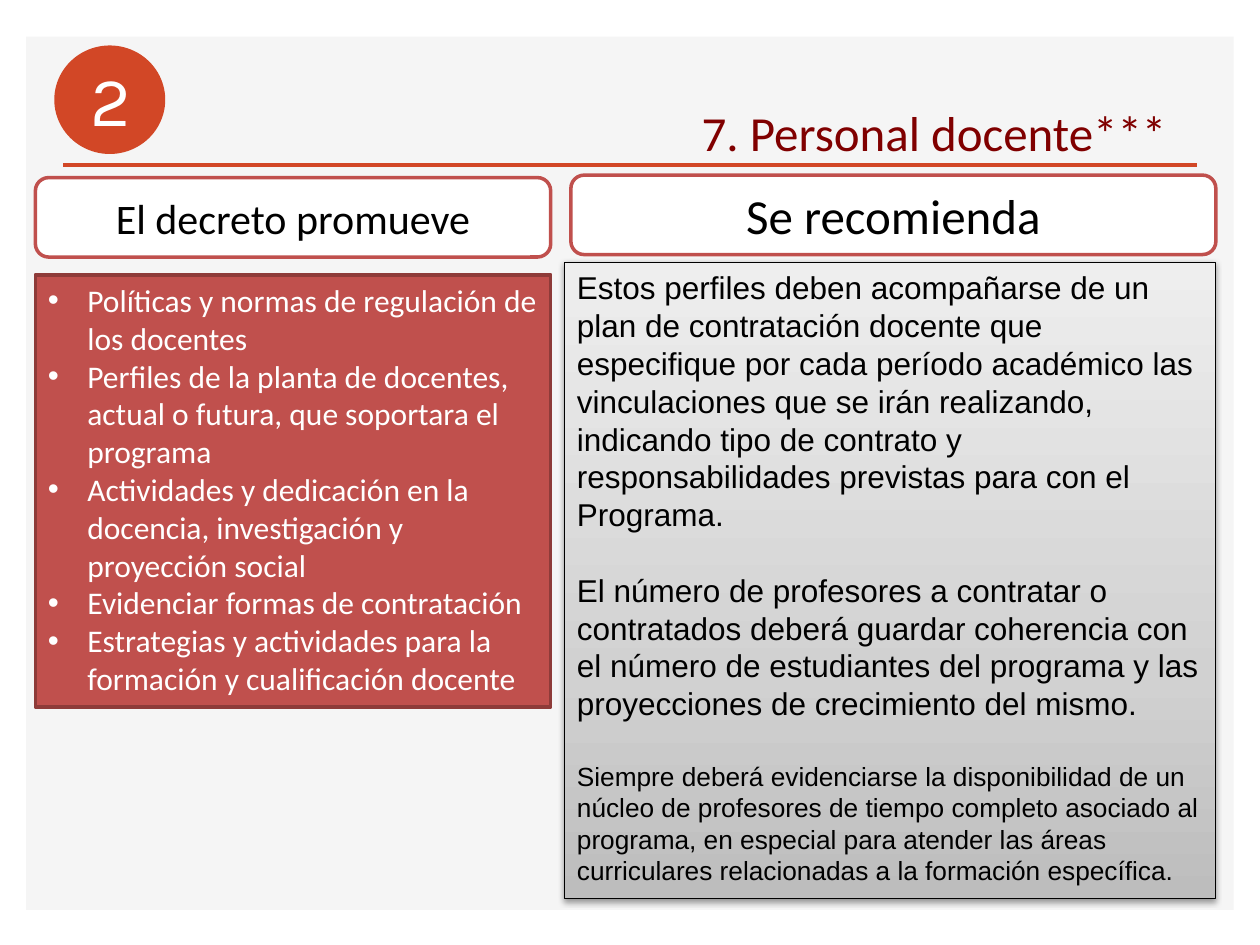
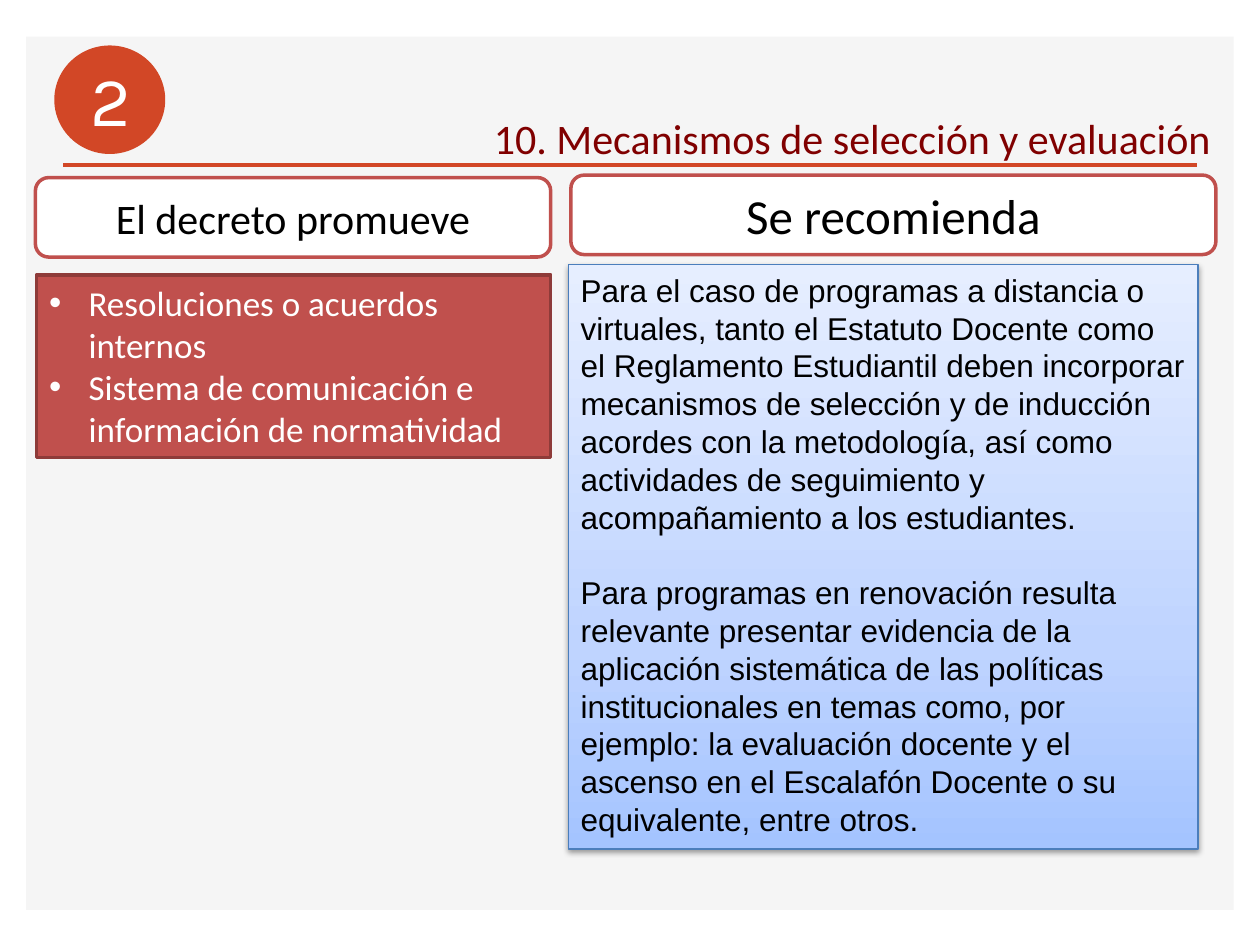
"""Build two slides that set decree requirements beside recommendations."""
from copy import deepcopy

from lxml import etree
from pptx import Presentation
from pptx.dml.color import RGBColor
from pptx.enum.shapes import MSO_CONNECTOR, MSO_SHAPE
from pptx.enum.text import MSO_ANCHOR, MSO_AUTO_SIZE, PP_ALIGN
from pptx.oxml.ns import qn
from pptx.util import Pt

RECTANGLE, ROUNDED, OVAL = MSO_SHAPE.RECTANGLE, MSO_SHAPE.ROUNDED_RECTANGLE, MSO_SHAPE.OVAL
STRAIGHT = MSO_CONNECTOR.STRAIGHT
TOP, MIDDLE = MSO_ANCHOR.TOP, MSO_ANCHOR.MIDDLE
LEFT, CENTER = PP_ALIGN.LEFT, PP_ALIGN.CENTER
NO_AUTOFIT = MSO_AUTO_SIZE.NONE

color = RGBColor.from_string
ORANGE, RED, DARK_RED, MAROON = "D24726", "C0504D", "8E3B39", "800000"
WHITE, BLACK, PALE_GRAY = "FFFFFF", "000000", "F5F5F5"
LINE_FACTOR = 1.2
BULLET_INDENT = Pt(22.5)

HEADERS = [
    ("El decreto promueve", 24, (20.2, 101.5, 294.5, 45.4)),
    ("Se recomienda", 28, (326.2, 100.1, 368.6, 45.4)),
]

PAGES = [
    {
        "title": ("7. Personal docente***", 28, (393.8, 54.7, 283, 41)),
        "list_place": (20.2, 157, 294.5, 247),
        "list_size": 18,
        "list": [
            "Políticas y normas de regulación de los docentes",
            "Perfiles de la planta de docentes, actual o futura, que soportara el programa",
            "Actividades y dedicación en la docencia, investigación y proyección social",
            "Evidenciar formas de contratación",
            "Estrategias y actividades para la formación y cualificación docente",
        ],
        "panel_place": (322.6, 149.8, 372.2, 363.6),
        "panel_line": BLACK,
        "gradient": ["BDBDBD", "D1D1D1", "EEEEEE"],
        "panel_sizes": [18, 18, 15],
        "panel": [
            "Estos perfiles deben acompañarse de un plan de contratación docente que "
            "especifique por cada período académico las vinculaciones que se irán "
            "realizando, indicando tipo de contrato y responsabilidades previstas "
            "para con el Programa.",
            "El número de profesores a contratar o contratados deberá guardar "
            "coherencia con el número de estudiantes del programa y las "
            "proyecciones de crecimiento del mismo.",
            "Siempre deberá evidenciarse la disponibilidad de un núcleo de profesores "
            "de tiempo completo asociado al programa, en especial para atender las "
            "áreas curriculares relacionadas a la formación específica.",
        ],
    },
    {
        "title": ("10. Mecanismos de selección y evaluación", 24, (275, 60.5, 428, 36)),
        "list_place": (20.9, 157, 293.8, 104.4),
        "list_size": 20,
        "list": [
            "Resoluciones o acuerdos internos",
            "Sistema de comunicación e información de normatividad",
        ],
        "panel_place": (324.7, 151.2, 360, 334),
        "panel_line": "4B7EBC",
        "gradient": ["A4C4FF", "BFD4FF", "E6EEFF"],
        "panel_sizes": [18, 18],
        "panel": [
            "Para el caso de programas a distancia o virtuales, tanto el Estatuto "
            "Docente como el Reglamento Estudiantil deben incorporar mecanismos de "
            "selección y de inducción acordes con la metodología, así como "
            "actividades de seguimiento y acompañamiento a los estudiantes.",
            "Para programas en renovación resulta relevante presentar evidencia de la "
            "aplicación sistemática de las políticas institucionales en temas como, "
            "por ejemplo: la evaluación docente y el ascenso en el Escalafón Docente "
            "o su equivalente, entre otros.",
        ],
    },
]


def paint(shape, place, fill, line=None, line_width=2):
    """Place a shape and set its fill and outline."""
    shape.left, shape.top, shape.width, shape.height = map(Pt, place)
    shape.fill.solid()
    shape.fill.fore_color.rgb = color(fill)
    if line:
        shape.line.color.rgb = color(line)
        shape.line.width = Pt(line_width)
    else:
        shape.line.fill.background()


def write(shape, texts, sizes, font, ink, align=LEFT, anchor=TOP):
    """Write one formatted paragraph for each text."""
    frame = shape.text_frame
    frame.text = "\n".join(texts)
    frame.word_wrap = True
    frame.auto_size = NO_AUTOFIT
    frame.vertical_anchor = anchor
    for paragraph, size in zip(frame.paragraphs, sizes):
        paragraph.alignment = align
        paragraph.space_before = Pt(0)
        for run in paragraph.runs:
            run.font.size = Pt(size)
            run.font.name = font
            run.font.color.rgb = color(ink)


presentation = Presentation()
presentation.slide_width, presentation.slide_height = Pt(720), Pt(540)
layout = presentation.slide_layouts[1]
for placeholder in list(layout.placeholders)[2:]:
    placeholder.element.getparent().remove(placeholder.element)
slides = [presentation.slides.add_slide(layout) for page in PAGES]

band = slides[0].shapes.add_shape(RECTANGLE, 0, 0, 0, 0)
band.shadow.inherit = False
paint(band, (15, 21, 690, 499), PALE_GRAY)
rule = slides[0].shapes.add_connector(STRAIGHT, Pt(36), Pt(94.3), Pt(684), Pt(94.3))
rule.line.color.rgb = color(ORANGE)
rule.line.width = Pt(2)
etree.SubElement(rule.element.spPr, qn("a:effectLst"))
layout_title = layout.placeholders[0].element
for shared_shape in (band, rule):
    layout_title.addprevious(shared_shape.element)

for slide, page in zip(slides, PAGES):
    badge = slide.shapes.add_group_shape()
    circle = badge.shapes.add_shape(OVAL, 0, 0, 0, 0)
    circle.shadow.inherit = False
    paint(circle, (31, 26, 63.4, 62), ORANGE)
    number = badge.shapes.add_textbox(Pt(20), Pt(28.8), Pt(86.4), Pt(55.4))
    write(number, ["2"], [40], "Karla", WHITE, CENTER)

    title = slide.shapes.title
    title_text, title_size, title_place = page["title"]
    title.left, title.top, title.width, title.height = map(Pt, title_place)
    write(title, [title_text], [title_size], "Calibri", MAROON)

    decree_list = slide.placeholders[1]
    size = page["list_size"]
    paint(decree_list, page["list_place"], RED, DARK_RED)
    write(decree_list, page["list"], [size] * len(page["list"]), "Calibri", WHITE)
    for paragraph in decree_list.text_frame.paragraphs:
        paragraph.line_spacing = Pt(size * LINE_FACTOR)
        properties = paragraph._p.get_or_add_pPr()
        properties.set("marL", str(BULLET_INDENT))
        properties.set("indent", str(-BULLET_INDENT))

    panel = slide.shapes.add_shape(RECTANGLE, 0, 0, 0, 0)
    paint(panel, page["panel_place"], WHITE, page["panel_line"], 0.75)
    panel.fill.gradient()
    panel.fill.gradient_angle = 90
    stop_list = panel.element.xpath(".//a:gsLst")[0]
    stop_list.append(deepcopy(stop_list[-1]))
    for stop, position, tone in zip(panel.fill.gradient_stops, (0, 0.35, 1), page["gradient"]):
        stop.position = position
        stop.color.rgb = color(tone)
    panel.shadow.inherit = False
    effects = panel.element.xpath(".//a:effectLst")[0]
    shadow = etree.SubElement(effects, qn("a:outerShdw"), blurRad=str(Pt(3.1)),
                              dist=str(Pt(1.6)), dir="5400000", rotWithShape="0")
    shadow_color = etree.SubElement(shadow, qn("a:srgbClr"), val=BLACK)
    etree.SubElement(shadow_color, qn("a:alpha"), val="38000")
    write(panel, page["panel"], page["panel_sizes"], "Arial", BLACK)
    for index, paragraph in enumerate(panel.text_frame.paragraphs):
        paragraph.line_spacing = Pt(page["panel_sizes"][index] * LINE_FACTOR)
        paragraph.space_before = Pt(18 * LINE_FACTOR if index else 0)

    for header_text, header_size, header_place in HEADERS:
        header = slide.shapes.add_shape(ROUNDED, 0, 0, 0, 0)
        header.shadow.inherit = False
        paint(header, header_place, WHITE, RED)
        write(header, [header_text], [header_size], "Calibri", BLACK, CENTER, MIDDLE)

presentation.save("out.pptx")
